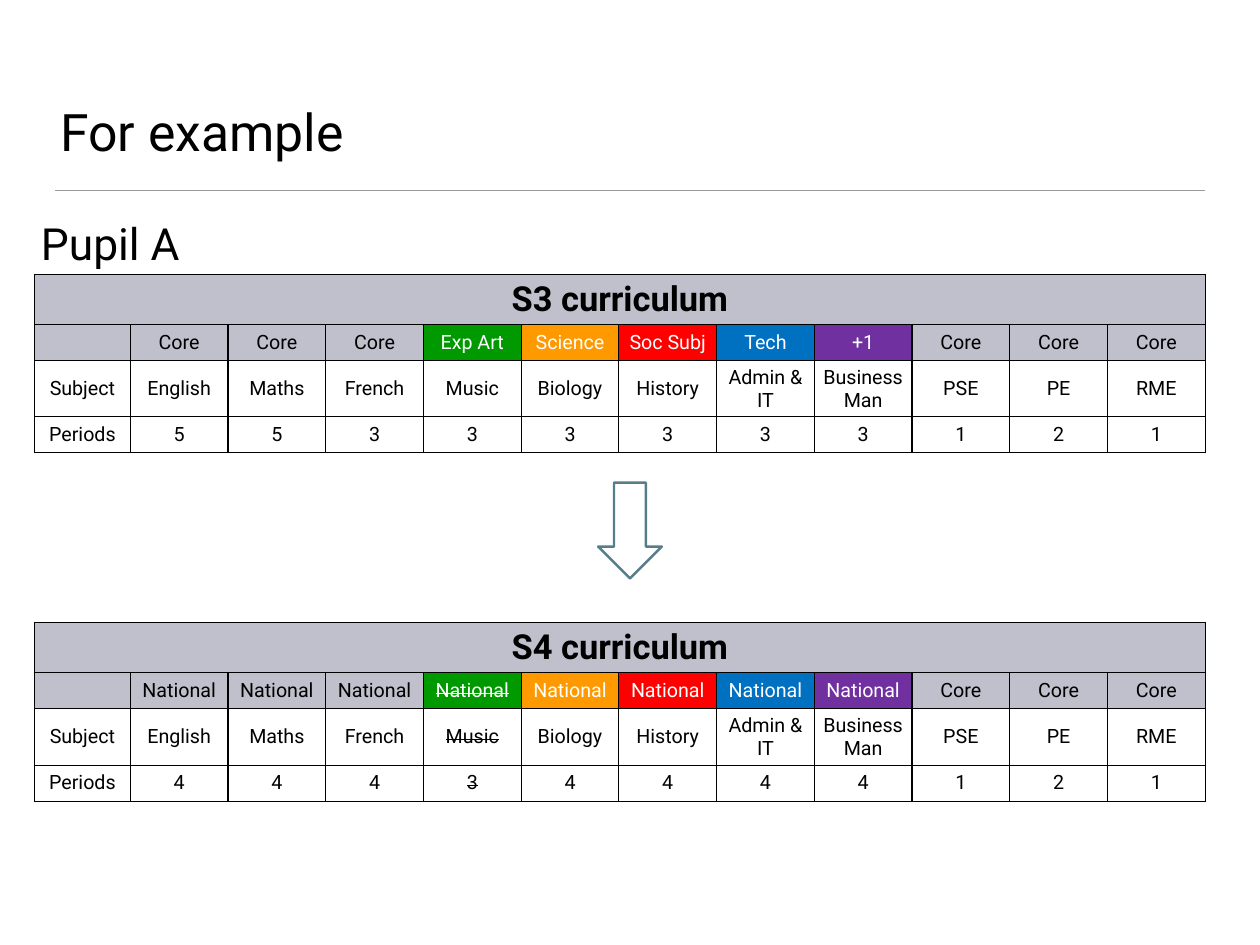
import pptx
import pptx.util
import pptx.dml.color
import pptx.enum.shapes
import pptx.enum.text
import pptx.oxml
from pptx.oxml.ns import nsdecls

Pt = pptx.util.Pt
ALIGN = pptx.enum.text.PP_ALIGN
ANCHOR = pptx.enum.text.MSO_ANCHOR

GREY = "BFC0CC"
HUES = [GREY] * 4 + ["009900", "FF9900", "FF0000", "0070C0", "7030A0"] + [GREY] * 3
NAMES = ["Subject", "English", "Maths", "French", "Music", "Biology", "History",
         "Admin & IT", "Business Man", "PSE", "PE", "RME"]
THIRD = [["", "Core", "Core", "Core", "Exp Art", "Science", "Soc Subj", "Tech", "+1",
          "Core", "Core", "Core"],
         NAMES, ["Periods", *"55333333121"]]
FOURTH = [["", *["National"] * 8, *["Core"] * 3],
          NAMES, ["Periods", *"44434444121"]]
MUSIC = NAMES.index("Music")


def paint(hue):
    return pptx.dml.color.RGBColor.from_string(hue)


class Deck:
    """Hold the slide, its font and its grid, and draw each kind of element."""

    font = "Roboto"
    ink = "000000"
    left = 28.1
    first, step = 77.8, 79.4
    rows = [40.6, 29.3, 43.9, 29.3]

    def __init__(self):
        self.show = pptx.Presentation()
        self.show.slide_width, self.show.slide_height = Pt(1023.84), Pt(768.24)
        self.slide = self.show.slides.add_slide(self.show.slide_layouts[6])
        self.shapes = self.slide.shapes

    def style(self, part, size, hue=ink, bold=False, strike=False):
        for run in part.runs:
            run.font.name = self.font
            run.font.size = Pt(size)
            run.font.bold = bold
            run.font.color.rgb = paint(hue)
            if strike:
                run.font._element.set("strike", "sngStrike")

    def text(self, words, box, size, anchor, align, wrap=True):
        frame = self.shapes.add_textbox(*map(Pt, box)).text_frame
        frame.word_wrap = wrap
        frame.vertical_anchor = anchor
        frame.margin_left = frame.margin_right = Pt(4.5)
        frame.margin_top = frame.margin_bottom = Pt(4.5)
        frame.text = words
        frame.paragraphs[0].alignment = align
        self.style(frame.paragraphs[0], size)

    def rule(self, x, y, end):
        kind = pptx.enum.shapes.MSO_CONNECTOR.STRAIGHT
        line = self.shapes.add_connector(kind, Pt(x), Pt(y), Pt(end), Pt(y))
        line.line.color.rgb = paint("9A9A9A")
        line.line.width = Pt(1)
        line._element.spPr.append(
            pptx.oxml.parse_xml(f"<a:effectLst {nsdecls('a')}/>"))

    def arrow(self, box):
        kind = pptx.enum.shapes.MSO_SHAPE.DOWN_ARROW
        shape = self.shapes.add_shape(kind, *map(Pt, box))
        shape.shadow.inherit = False
        shape.fill.solid()
        shape.fill.fore_color.rgb = paint("FFFFFF")
        shape.line.color.rgb = paint("557E8A")
        shape.line.width = Pt(2)

    def cell(self, cell, words, size, fill=None, **look):
        for side in "LRTB":
            cell._tc.get_or_add_tcPr().append(pptx.oxml.parse_xml(
                f'<a:ln{side} {nsdecls("a")} w="{Pt(1)}"><a:solidFill>'
                f'<a:srgbClr val="{self.ink}"/></a:solidFill></a:ln{side}>'))
        if fill:
            cell.fill.solid()
            cell.fill.fore_color.rgb = paint(fill)
        else:
            cell.fill.background()
        cell.vertical_anchor = ANCHOR.MIDDLE
        cell.text = words
        part = cell.text_frame.paragraphs[0]
        part.alignment = ALIGN.CENTER
        self.style(part, size, **look)

    def table(self, title, data, top, dropped=None):
        cols = len(NAMES)
        widths = [self.first] + [self.step] * (cols - 1)
        box = self.left, top, sum(widths), sum(self.rows)
        grid = self.shapes.add_table(len(self.rows), cols, *map(Pt, box)).table
        grid.first_row = grid.horz_banding = False
        for col, width in zip(grid.columns, widths):
            col.width = Pt(width)
        for row, height in zip(grid.rows, self.rows):
            row.height = Pt(height)
        for c in range(cols):
            self.cell(grid.cell(0, c), "" if c else title, 28, GREY, bold=True)
        grid.cell(0, 0).merge(grid.cell(0, cols - 1))
        for r, line in enumerate(data, 1):
            for c, words in enumerate(line):
                fill = HUES[c] if r == 1 else None
                hue = self.ink if fill in (None, GREY) else "FFFFFF"
                self.cell(grid.cell(r, c), words, 16, fill, hue=hue,
                          strike=c == dropped)


def main():
    deck = Deck()
    deck.rule(44.6, 154.8, 979.2)
    deck.text("For example", (44.6, 25.9, 933.8, 110.2), 42, ANCHOR.BOTTOM, ALIGN.LEFT)
    deck.table("S3 curriculum", THIRD, 223.2)
    deck.arrow((486, 392.4, 51.8, 77.8))
    deck.table("S4 curriculum", FOURTH, 506.2, MUSIC)
    deck.text("Pupil A", (28.1, 171.4, 123.1, 51.8), 36, ANCHOR.MIDDLE, ALIGN.CENTER, False)
    deck.show.save("out.pptx")


if __name__ == "__main__":
    main()
